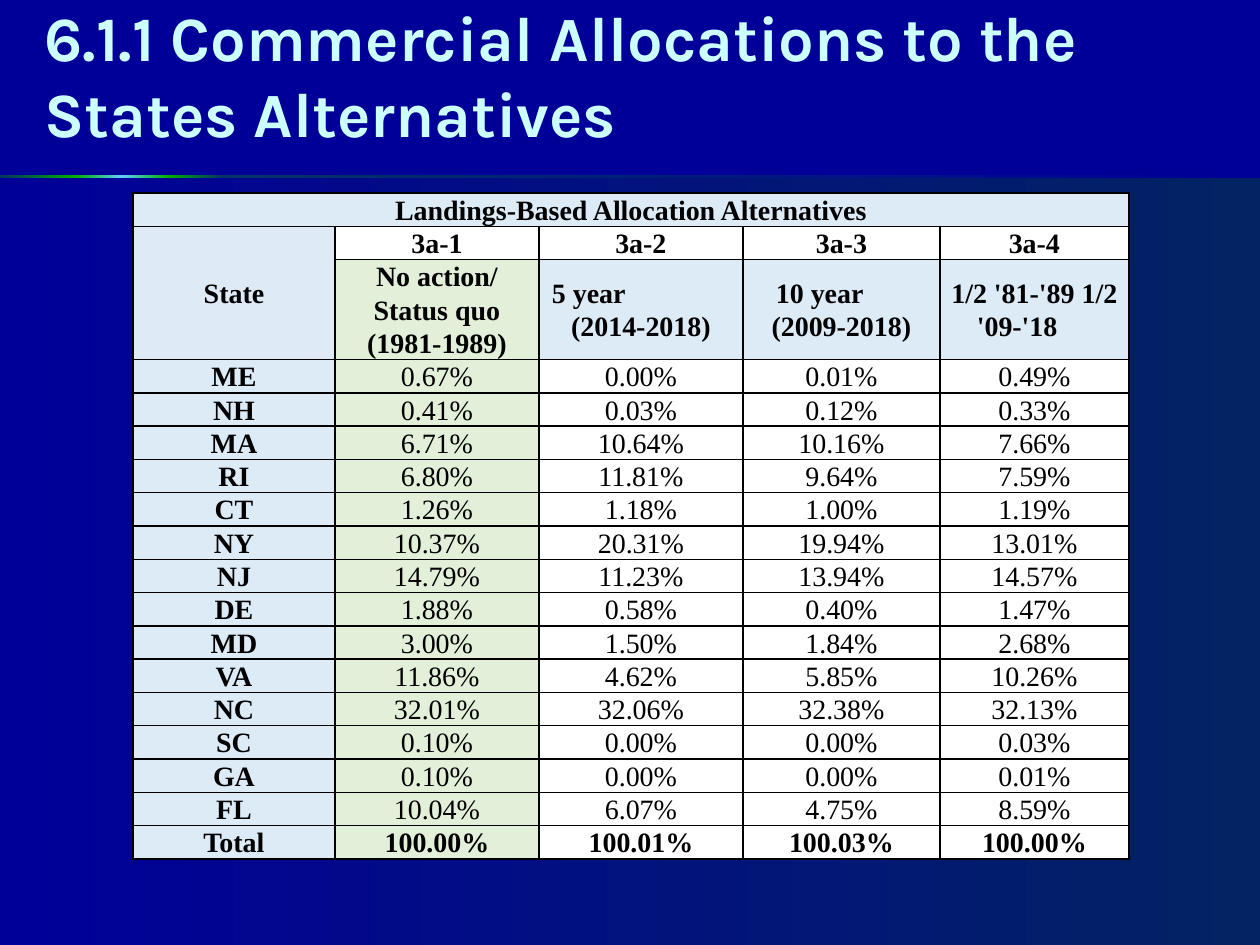
from lxml.etree import SubElement
from pptx import Presentation
from pptx.dml.color import RGBColor
from pptx.enum.shapes import MSO_SHAPE
from pptx.enum.text import MSO_ANCHOR, MSO_AUTO_SIZE, PP_ALIGN
from pptx.oxml.ns import qn
from pptx.util import Pt

PX = 914400 // 126
COLORS = {
    "background": "000099", "panel_end": "032363", "title": "CCFFFF",
    "rule_dark": "003366", "rule_green": "00B000", "rule_light": "66CCFF",
    "text": "000000", "blue": "DDEBF7", "state": "DEEAF6",
    "green": "E2EFD9", "white": "FFFFFF",
}


def write(paragraph, text, font="Times New Roman", size=16, color="text",
          bold=True, align=PP_ALIGN.CENTER, spacing=1.07, indent=0):
    paragraph.alignment = align
    paragraph.line_spacing = spacing
    if indent:
        paragraph._p.get_or_add_pPr().set("marL", str(indent * PX))
    run = paragraph.add_run()
    run.text = text
    run.font.name = font
    run.font.size = Pt(size)
    run.font.bold = bold
    run.font.color.rgb = RGBColor.from_string(COLORS[color])


def add_gradient_bar(slide, left, top, width, height, names):
    shape = slide.shapes.add_shape(
        MSO_SHAPE.RECTANGLE, left * PX, top * PX, width * PX, height * PX)
    shape.shadow.inherit = False
    shape.line.fill.background()
    shape.fill.gradient()
    shape.fill.gradient_angle = 0
    stops = shape._element.spPr.find(".//" + qn("a:gsLst"))
    for stop in list(stops):
        stops.remove(stop)
    for index, name in enumerate(names):
        position = 100000 * index // (len(names) - 1)
        stop = SubElement(stops, qn("a:gs"), pos=str(position))
        SubElement(stop, qn("a:srgbClr"), val=COLORS[name])


presentation = Presentation()
presentation.slide_width = 1260 * PX
presentation.slide_height = 945 * PX
slide = presentation.slides.add_slide(presentation.slide_layouts[5])
slide.background.fill.solid()
slide.background.fill.fore_color.rgb = RGBColor.from_string(COLORS["background"])

for left, top, width, height, names in [
    (0, 178, 1260, 767, ["background", "panel_end"]),
    (223, 175, 1037, 3, ["rule_dark", "background"]),
    (0, 175, 76, 3, ["rule_dark", "rule_green"]),
    (168, 175, 55, 3, ["rule_green", "rule_dark"]),
    (76, 175, 92, 3, ["rule_green", "rule_light", "rule_green"]),
]:
    add_gradient_bar(slide, left, top, width, height, names)

title = slide.shapes.title
title.left, title.top, title.width, title.height = [
    length * PX for length in (32, 18, 1197, 138)]
title.text_frame.word_wrap = True
title.text_frame.auto_size = MSO_AUTO_SIZE.NONE
title.text_frame.vertical_anchor = MSO_ANCHOR.BOTTOM
write(title.text_frame.paragraphs[0],
      "6.1.1 Commercial Allocations to the States Alternatives",
      font="Karla", size=36, color="title", align=PP_ALIGN.LEFT, spacing=1.0)

allocations = [
    ["ME", "0.67%", "0.00%", "0.01%", "0.49%"],
    ["NH", "0.41%", "0.03%", "0.12%", "0.33%"],
    ["MA", "6.71%", "10.64%", "10.16%", "7.66%"],
    ["RI", "6.80%", "11.81%", "9.64%", "7.59%"],
    ["CT", "1.26%", "1.18%", "1.00%", "1.19%"],
    ["NY", "10.37%", "20.31%", "19.94%", "13.01%"],
    ["NJ", "14.79%", "11.23%", "13.94%", "14.57%"],
    ["DE", "1.88%", "0.58%", "0.40%", "1.47%"],
    ["MD", "3.00%", "1.50%", "1.84%", "2.68%"],
    ["VA", "11.86%", "4.62%", "5.85%", "10.26%"],
    ["NC", "32.01%", "32.06%", "32.38%", "32.13%"],
    ["SC", "0.10%", "0.00%", "0.00%", "0.03%"],
    ["GA", "0.10%", "0.00%", "0.00%", "0.01%"],
    ["FL", "10.04%", "6.07%", "4.75%", "8.59%"],
    ["Total", "100.00%", "100.01%", "100.03%", "100.00%"],
]
rows = [
    ["Landings-Based Allocation Alternatives"],
    ["State", "3a-1", "3a-2", "3a-3", "3a-4"],
    ["", "No action/ Status quo (1981-1989)"],
    [],
] + allocations
period_lines = {
    2: [("5 year", 4), ("(2014-2018)", 0)],
    3: [("10 year", 24), ("(2009-2018)", 0)],
    4: [("1/2 '81-'89 1/2", 0), ("'09-'18", 28)],
}
column_widths = [202, 204, 204, 197, 189, 39]
row_heights = [33, 33, 67] + [33] * 16

table_frame = slide.shapes.add_table(
    len(rows), len(column_widths), 133 * PX, 193 * PX,
    sum(column_widths) * PX, sum(row_heights) * PX)
table = table_frame.table
table.first_row = False
table.horz_banding = False
table._tbl.tblPr.find(qn("a:tableStyleId")).text = (
    "{2D5ABB26-0587-4C30-8999-92F81FD0307C}")
for column, width in zip(table.columns, column_widths):
    column.width = width * PX
for row, height in zip(table.rows, row_heights):
    row.height = height * PX

for row_index, texts in enumerate(rows):
    for column_index in range(len(column_widths)):
        cell = table.cell(row_index, column_index)
        cell.margin_left = cell.margin_right = 9 * PX
        cell.margin_top = cell.margin_bottom = 0
        is_number = row_index > 3 and column_index > 0
        cell.vertical_anchor = MSO_ANCHOR.BOTTOM if is_number else MSO_ANCHOR.MIDDLE
        paragraph = cell.text_frame.paragraphs[0]
        text = texts[column_index] if column_index < len(texts) else ""
        if row_index == 2 and column_index in period_lines:
            for number, (line, indent) in enumerate(period_lines[column_index]):
                if number:
                    paragraph = cell.text_frame.add_paragraph()
                write(paragraph, line, indent=indent,
                      align=PP_ALIGN.LEFT if indent else PP_ALIGN.CENTER)
        elif text:
            write(paragraph, text, bold=not is_number or texts[0] == "Total")
        else:
            SubElement(paragraph._p, qn("a:endParaRPr"), sz="1000")

        if column_index == 5:
            cell.fill.background()
            continue
        for side in ("a:lnL", "a:lnR", "a:lnT", "a:lnB"):
            border = SubElement(cell._tc.get_or_add_tcPr(), qn(side), w=str(Pt(1)))
            border_fill = SubElement(border, qn("a:solidFill"))
            SubElement(border_fill, qn("a:srgbClr"), val=COLORS["text"])
        if column_index == 0 and 0 < row_index < 4:
            fill = "state"
        elif row_index == 0 or column_index == 0:
            fill = "blue"
        elif row_index == 1:
            fill = "white"
        elif column_index == 1:
            fill = "green"
        else:
            fill = "blue" if row_index < 4 else "white"
        cell.fill.solid()
        cell.fill.fore_color.rgb = RGBColor.from_string(COLORS[fill])

table.cell(0, 0).merge(table.cell(0, 4))
table.cell(1, 0).merge(table.cell(3, 0))
for column_index in range(1, 5):
    table.cell(2, column_index).merge(table.cell(3, column_index))

presentation.save("out.pptx")
